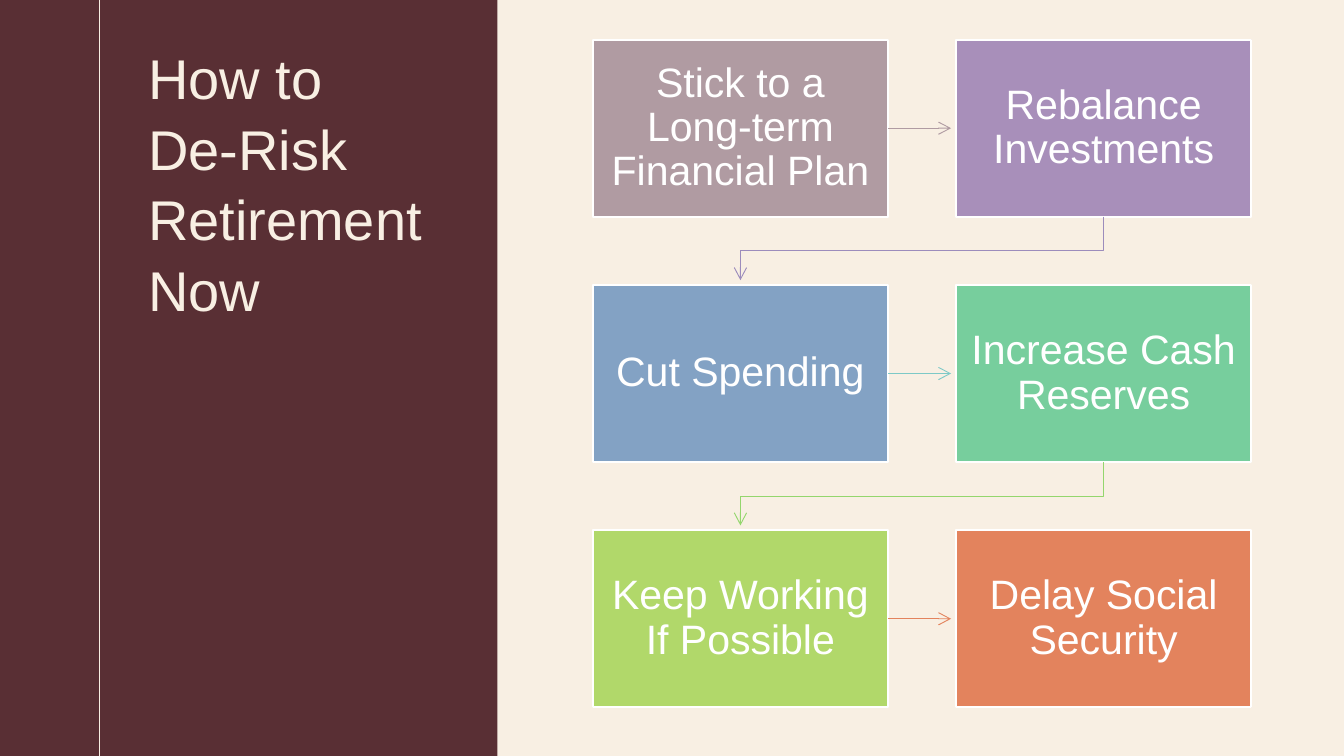
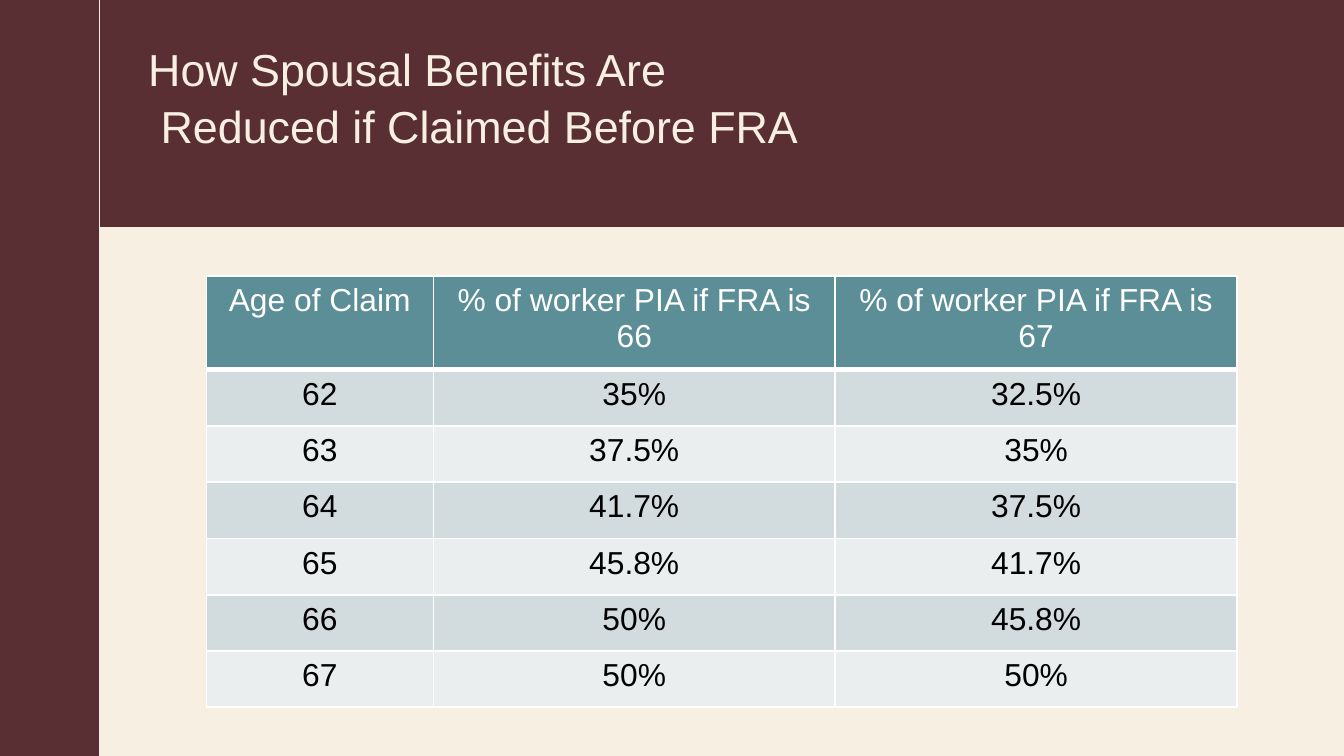
from dataclasses import dataclass
from typing import NamedTuple

from lxml.etree import SubElement
from pptx import Presentation
from pptx.dml.color import RGBColor
from pptx.enum.shapes import MSO_CONNECTOR, MSO_SHAPE
from pptx.enum.text import MSO_ANCHOR, MSO_AUTO_SIZE, PP_ALIGN
from pptx.oxml.ns import qn
from pptx.util import Cm, Pt


@dataclass(frozen=True)
class Theme:
    font: str = "Arial"
    maroon: str = "592F34"
    cream: str = "F8EFE3"
    white: str = "FFFFFF"
    black: str = "000000"
    header: str = "5B8E96"
    stripes: tuple = ("D2DBDD", "EAEEEF")
    side_title: int = 30
    top_title: int = 24
    step: int = 22
    table: int = 17
    rail_line: float = 0.75
    arrow_line: float = 0.5
    border: float = 1
    header_border: float = 3


class Box(NamedTuple):
    """A region in centimetres."""
    left: float
    top: float
    width: float
    height: float

    def lengths(self):
        return [Cm(value) for value in self]


THEME = Theme()
SLIDE = Box(0, 0, 25.4, 14.29)
RAIL = 1.88

# Each step: wording, box colour, colour of the arrow that leaves it
STEPS = [
    ("Stick to a Long-term Financial Plan", "B09BA2", "B09BA2"),
    ("Rebalance Investments", "A88FBA", "9C8CBC"),
    ("Cut Spending", "83A2C4", "7DC9C7"),
    ("Increase Cash Reserves", "77CE9D", "94D66D"),
    ("Keep Working If Possible", "B1D86A", "E3835D"),
    ("Delay Social Security", "E3835D", None),
]

BENEFITS = [
    ("Age of Claim", "% of worker PIA if FRA is 66", "% of worker PIA if FRA is 67"),
    ("62", "35%", "32.5%"),
    ("63", "37.5%", "35%"),
    ("64", "41.7%", "37.5%"),
    ("65", "45.8%", "41.7%"),
    ("66", "50%", "45.8%"),
    ("67", "50%", "50%"),
]


def rgb(colour):
    return RGBColor.from_string(colour)


def format_text(frame, size, colour, align, spacing):
    for paragraph in frame.paragraphs:
        paragraph.alignment = align
        paragraph.line_spacing = spacing
        for run in paragraph.runs:
            run.font.name = THEME.font
            run.font.size = Pt(size)
            run.font.bold = False
            run.font.color.rgb = rgb(colour)


def set_insets(frame, inset):
    frame.margin_left = frame.margin_right = Cm(inset)
    frame.margin_top = frame.margin_bottom = Cm(inset)


def add_block(slide, box, fill, outline=None):
    block = slide.shapes.add_shape(MSO_SHAPE.RECTANGLE, *box.lengths())
    block.shadow.inherit = False
    block.fill.solid()
    block.fill.fore_color.rgb = rgb(fill)
    if outline:
        block.line.color.rgb = rgb(outline)
        block.line.width = Pt(THEME.border)
    else:
        block.line.fill.background()
    return block


def style_line(shape, colour, width):
    shape.line.color.rgb = rgb(colour)
    shape.line.width = Pt(width)


def add_straight(slide, start, end, colour, width):
    points = [Cm(value) for value in (*start, *end)]
    connector = slide.shapes.add_connector(MSO_CONNECTOR.STRAIGHT, *points)
    style_line(connector, colour, width)
    SubElement(connector.element.spPr, qn("a:effectLst"))
    return connector


def add_bent(slide, points, colour, width):
    start, *rest = [(Cm(x), Cm(y)) for x, y in points]
    builder = slide.shapes.build_freeform(*start)
    builder.add_line_segments(rest, close=False)
    bent = builder.convert_to_shape()
    bent.shadow.inherit = False
    bent.fill.background()
    style_line(bent, colour, width)
    return bent


def add_arrowhead(shape):
    outline = shape.element.spPr.find(qn("a:ln"))
    SubElement(outline, qn("a:tailEnd"), type="arrow")


def add_titled_slide(prs, wording, title_box, size, bands):
    slide = prs.slides.add_slide(prs.slide_layouts[5])
    title = slide.shapes.title

    # Bands and rail line lie behind the title
    for band in bands:
        title.element.addprevious(add_block(slide, band, THEME.maroon).element)
    add_straight(slide, (RAIL, 0), (RAIL, SLIDE.height), THEME.cream, THEME.rail_line)

    title.left, title.top, title.width, title.height = title_box.lengths()
    frame = title.text_frame
    frame.text = wording
    frame.word_wrap = True
    frame.auto_size = MSO_AUTO_SIZE.NONE
    frame.vertical_anchor = MSO_ANCHOR.TOP
    set_insets(frame, 0)
    format_text(frame, size, THEME.cream, PP_ALIGN.LEFT, 1.05)
    return slide


def add_step(slide, box, wording, fill):
    step = add_block(slide, box, fill, THEME.white)
    frame = step.text_frame
    frame.text = wording
    frame.word_wrap = True
    frame.vertical_anchor = MSO_ANCHOR.MIDDLE
    set_insets(frame, 0.27)
    format_text(frame, THEME.step, THEME.white, PP_ALIGN.CENTER, 0.9)


def add_step_flow(slide, area, columns=2, gap_x=1.28, gap_y=1.29):
    rows = len(STEPS) // columns
    width = (area.width - gap_x * (columns - 1)) / columns
    height = (area.height - gap_y * (rows - 1)) / rows
    boxes = [
        Box(area.left + index % columns * (width + gap_x),
            area.top + index // columns * (height + gap_y), width, height)
        for index in range(len(STEPS))
    ]

    for index, (wording, fill, arrow_colour) in enumerate(STEPS):
        box = boxes[index]
        add_step(slide, box, wording, fill)
        if not arrow_colour:
            continue
        following = boxes[index + 1]
        if following.top == box.top:
            # Across to the neighbour
            middle = box.top + height / 2
            arrow = add_straight(slide, (box.left + width, middle),
                                 (following.left - 0.09, middle),
                                 arrow_colour, THEME.arrow_line)
        else:
            # Down and back to the next row
            start_x, end_x = box.left + width / 2, following.left + width / 2
            bottom = box.top + height
            turn = bottom + gap_y / 2
            arrow = add_bent(slide, [(start_x, bottom), (start_x, turn), (end_x, turn),
                                     (end_x, following.top - 0.09)],
                             arrow_colour, THEME.arrow_line)
        add_arrowhead(arrow)


def add_cell_borders(cell, bottom):
    properties = cell._tc.get_or_add_tcPr()
    widths = {"L": THEME.border, "R": THEME.border, "T": THEME.border, "B": bottom}
    for side, width in widths.items():
        border = SubElement(properties, qn(f"a:ln{side}"), w=str(Pt(width)))
        fill = SubElement(border, qn("a:solidFill"))
        SubElement(fill, qn("a:srgbClr"), val=THEME.white)


def add_benefit_table(slide, area, age_width=4.29, header_height=1.77):
    rows, columns = len(BENEFITS), len(BENEFITS[0])
    table = slide.shapes.add_table(rows, columns, *area.lengths()).table

    for index, column in enumerate(table.columns):
        share = (area.width - age_width) / (columns - 1)
        column.width = Cm(share if index else age_width)
    for index, row in enumerate(table.rows):
        share = (area.height - header_height) / (rows - 1)
        row.height = Cm(share if index else header_height)

    for row_index, values in enumerate(BENEFITS):
        is_header = row_index == 0
        fill = THEME.header if is_header else THEME.stripes[(row_index - 1) % 2]
        colour = THEME.white if is_header else THEME.black
        bottom = THEME.header_border if is_header else THEME.border
        for column_index, value in enumerate(values):
            cell = table.cell(row_index, column_index)
            cell.text = value
            add_cell_borders(cell, bottom)
            cell.fill.solid()
            cell.fill.fore_color.rgb = rgb(fill)
            format_text(cell.text_frame, THEME.table, colour, PP_ALIGN.CENTER, 1.0)


def build_steps_slide(prs):
    slide = add_titled_slide(
        prs, "How to\vDe-Risk Retirement Now", Box(2.8, 0.76, 5.7, 12.7),
        THEME.side_title, [Box(0, 0, 9.4, SLIDE.height)])
    add_step_flow(slide, Box(11.2, 0.75, 12.45, 12.62))


def build_benefits_slide(prs):
    slide = add_titled_slide(
        prs, "How Spousal Benefits Are\v Reduced if Claimed Before FRA",
        Box(2.8, 0.74, 14.1, 2.6), THEME.top_title,
        [Box(0, 0, RAIL, SLIDE.height), Box(RAIL, 0, SLIDE.width - RAIL, 4.29)])
    add_benefit_table(slide, Box(3.9, 5.22, 19.48, 8.15))


def main():
    prs = Presentation()
    prs.slide_width, prs.slide_height = Cm(SLIDE.width), Cm(SLIDE.height)
    backdrop = prs.slide_master.background.fill
    backdrop.solid()
    backdrop.fore_color.rgb = rgb(THEME.cream)
    build_steps_slide(prs)
    build_benefits_slide(prs)
    prs.save("out.pptx")


if __name__ == "__main__":
    main()
